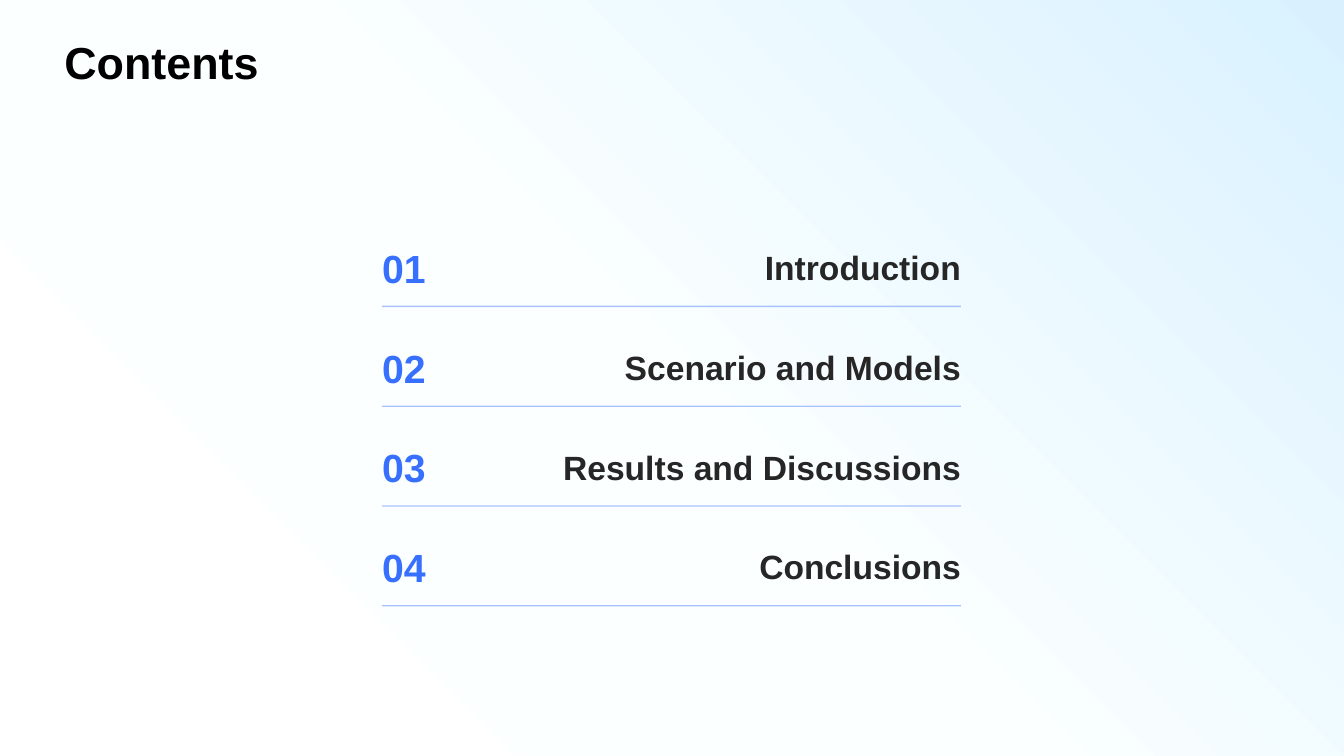
from dataclasses import dataclass

from lxml.etree import SubElement
from pptx import Presentation
from pptx.dml.color import RGBColor
from pptx.enum.shapes import MSO_CONNECTOR
from pptx.enum.text import MSO_ANCHOR as ANCHOR, PP_ALIGN as ALIGN
from pptx.oxml.ns import qn
from pptx.util import Inches, Pt


@dataclass(frozen=True)
class Theme:
    font: str = "Arial"
    title: str = "000000"
    number: str = "376FFF"
    entry: str = "262626"
    rule: str = "87A9FF"
    rule_opacity: int = 70
    title_size: int = 32
    number_size: int = 28
    entry_size: int = 24
    background: tuple = ((0, "D9F1FF"), (51, "FBFFFF"), (100, "FFFFFF"))


THEME = Theme()
ENTRIES = ["Introduction", "Scenario and Models",
           "Results and Discussions", "Conclusions"]

# Contents list layout, in inches
LEFT, RIGHT = 3.79, 9.53
NUMBER_WIDTH = 0.56
FIRST_RULE, ROW_PITCH = 3.04, 0.99


def set_background(s):
    """Diagonal gradient running from the top right corner."""
    fill = s.background.fill
    fill.gradient()
    fill.gradient_angle = 225
    stops = s._element.find(".//" + qn("a:gsLst"))
    for stop in list(stops):
        stops.remove(stop)
    for position, color in THEME.background:
        stop = SubElement(stops, qn("a:gs"), pos=str(position * 1000))
        SubElement(stop, qn("a:srgbClr"), val=color)


def add_text(s, text, left, top, width, height, *, size, color,
             align=ALIGN.LEFT, anchor=ANCHOR.BOTTOM, wrap=True, inset=0):
    box = s.shapes.add_textbox(Inches(left), Inches(top),
                               Inches(width), Inches(height))
    tf = box.text_frame
    tf.word_wrap = wrap
    tf.vertical_anchor = anchor
    tf.margin_left = tf.margin_right = Inches(inset)
    tf.margin_top = tf.margin_bottom = 0
    p = tf.paragraphs[0]
    p.alignment = align
    r = p.add_run()
    r.text = text
    r.font.name = THEME.font
    r.font.size = Pt(size)
    r.font.bold = True
    r.font.color.rgb = RGBColor.from_string(color)


def add_rule(s, y):
    line = s.shapes.add_connector(MSO_CONNECTOR.STRAIGHT, Inches(RIGHT),
                                  Inches(y), Inches(LEFT), Inches(y))
    line.line.width = Pt(1)
    line.line.color.rgb = RGBColor.from_string(THEME.rule)
    color = line._element.spPr.find(".//" + qn("a:srgbClr"))
    SubElement(color, qn("a:alpha"), val=str(THEME.rule_opacity * 1000))
    SubElement(line._element.spPr, qn("a:effectLst"))


def add_entry(s, index, text):
    """One row: number on the left, heading on the right, rule below."""
    y = FIRST_RULE + index * ROW_PITCH
    add_text(s, f"{index + 1:02}", LEFT, y - 0.91, NUMBER_WIDTH, 0.76,
             size=THEME.number_size, color=THEME.number, wrap=False)
    add_rule(s, y)
    entry_left = LEFT + NUMBER_WIDTH
    add_text(s, text, entry_left, y - 0.82, RIGHT - entry_left, 0.63,
             size=THEME.entry_size, color=THEME.entry, align=ALIGN.RIGHT)


def main():
    prs = Presentation()
    prs.slide_width, prs.slide_height = Inches(13.33), Inches(7.5)
    s = prs.slides.add_slide(prs.slide_layouts[6])
    set_background(s)

    # Title
    add_text(s, "Contents", 0.54, 0.31, 11.88, 0.6, size=THEME.title_size,
             color=THEME.title, anchor=ANCHOR.MIDDLE, inset=0.1)

    # Contents list
    for index, text in enumerate(ENTRIES):
        add_entry(s, index, text)

    prs.save("out.pptx")


if __name__ == "__main__":
    main()
